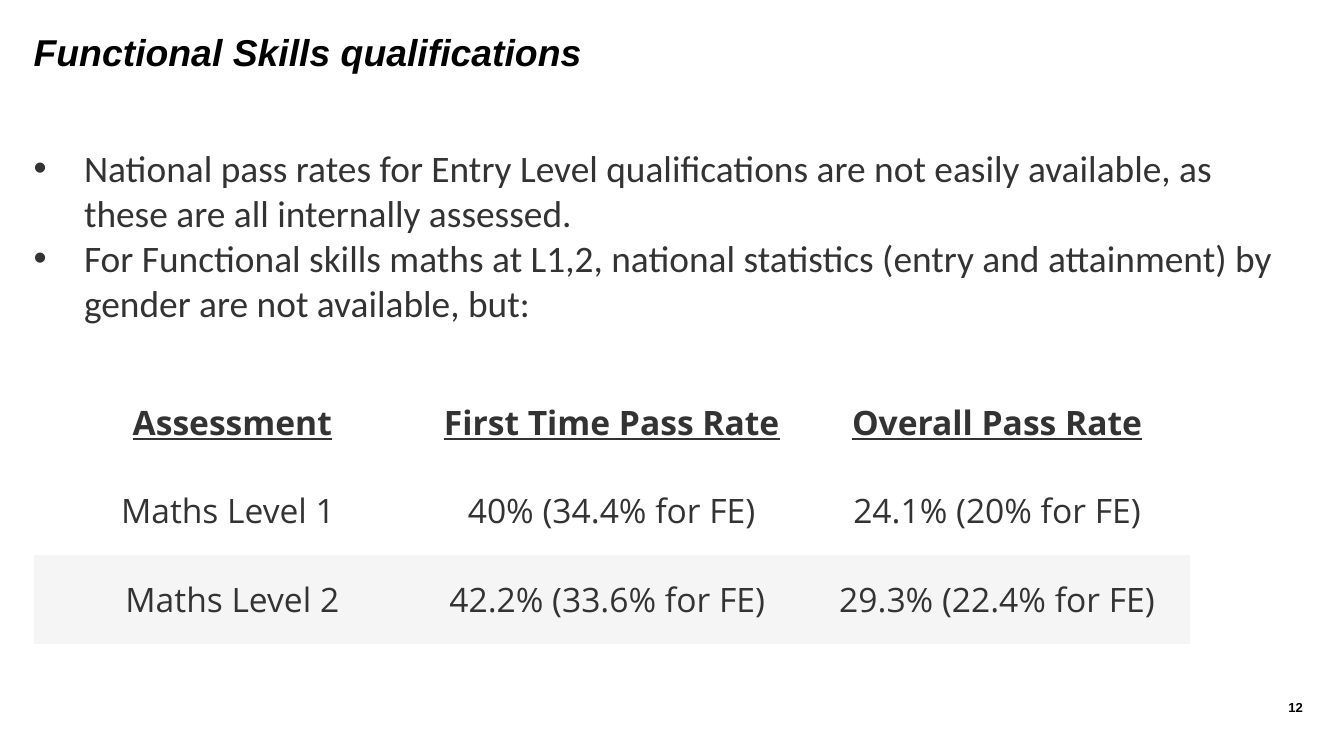
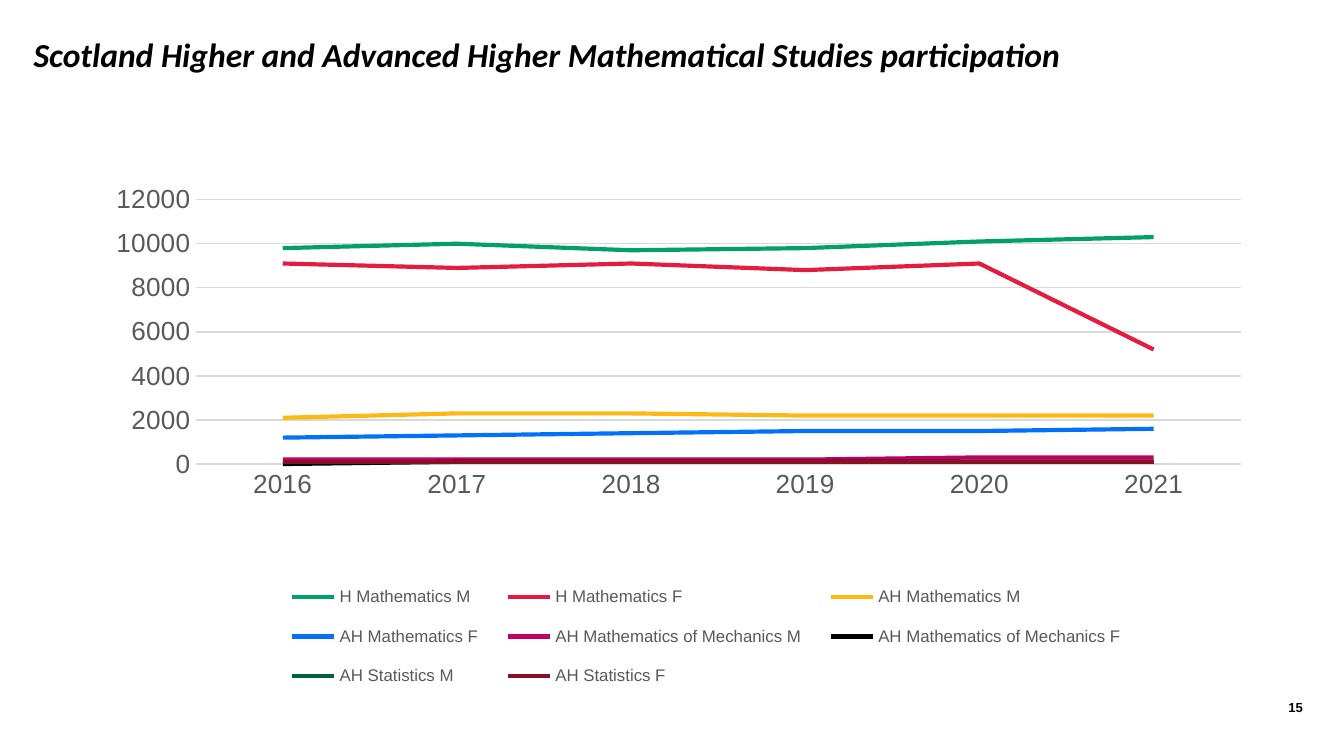
from lxml import etree
from pptx import Presentation
from pptx.chart.data import CategoryChartData
from pptx.dml.color import RGBColor
from pptx.enum.chart import XL_CHART_TYPE, XL_LEGEND_POSITION, XL_TICK_MARK
from pptx.enum.text import MSO_ANCHOR, MSO_AUTO_SIZE, PP_ALIGN
from pptx.oxml.ns import qn
from pptx.util import Pt

LINE_CHART = XL_CHART_TYPE.LINE
LEGEND_BOTTOM = XL_LEGEND_POSITION.BOTTOM
NO_TICK = XL_TICK_MARK.NONE
TOP, MIDDLE = MSO_ANCHOR.TOP, MSO_ANCHOR.MIDDLE
CENTER, RIGHT = PP_ALIGN.CENTER, PP_ALIGN.RIGHT
NO_AUTOFIT = MSO_AUTO_SIZE.NONE
BULLET_LAYOUT, TITLE_LAYOUT = 1, 5
PLAIN_TABLE_STYLE = "{2D5ABB26-0587-4C30-8999-92F81FD0307C}"

BLACK, WHITE, TEXT, PALE = "000000", "FFFFFF", "333333", "F5F5F5"
AXIS_TEXT, GRID = "595959", "D9D9D9"
LEFT = 18

POINTS = [
    "National pass rates for Entry Level qualifications are not easily available, "
    "as these are all internally assessed.",
    "For Functional skills maths at L1,2, national statistics (entry and attainment) "
    "by gender are not available, but:",
]
PASS_RATES = [
    ("Assessment", "First Time Pass Rate", "Overall Pass Rate"),
    ("Maths Level 1 ", "40% (34.4% for FE)", "24.1% (20% for FE)"),
    ("Maths Level 2", "42.2% (33.6% for FE) ", "29.3% (22.4% for FE)"),
]
YEARS = ["2016", "2017", "2018", "2019", "2020", "2021"]
PARTICIPATION = [
    ("H Mathematics M", "00A068", (9800, 10000, 9700, 9800, 10100, 10300)),
    ("H Mathematics F", "E51C41", (9100, 8900, 9100, 8800, 9100, 5200)),
    ("AH Mathematics M", "FDB913", (2100, 2300, 2300, 2200, 2200, 2200)),
    ("AH Mathematics F", "0071F8", (1200, 1300, 1400, 1500, 1500, 1600)),
    ("AH Mathematics of Mechanics M", "BE0064", (200, 200, 200, 200, 300, 300)),
    ("AH Mathematics of Mechanics F", BLACK, (0, 100, 100, 100, 100, 100)),
    ("AH Statistics M", "00603E", (100,) * 6),
    ("AH Statistics F", "8A1026", (100,) * 6),
]


def rgb(value):
    return RGBColor.from_string(value)


def set_font(font, size, color, name="Arial", bold=False, italic=False, underline=False):
    font.size, font.name = Pt(size), name
    font.bold, font.italic, font.underline = bold, italic, underline
    font.color.rgb = rgb(color)


def set_layout(parent, position, bounds, inner=False):
    for old in parent.findall(qn("c:layout")):
        parent.remove(old)
    layout = etree.Element(qn("c:layout"))
    parent.insert(position, layout)
    manual = etree.SubElement(layout, qn("c:manualLayout"))
    settings = [("layoutTarget", "inner")] if inner else []
    settings += [("xMode", "edge"), ("yMode", "edge"), *zip("xywh", bounds)]
    for tag, value in settings:
        etree.SubElement(manual, qn(f"c:{tag}")).set("val", str(value))


class SlideBuilder:
    def __init__(self):
        self.deck = Presentation()
        self.deck.slide_width, self.deck.slide_height = Pt(720), Pt(405)
        self.page = None

    def add_page(self, layout, title, number, size, font):
        self.page = self.deck.slides.add_slide(self.deck.slide_layouts[layout])
        para = self.fill_text(self.page.shapes.title, (LEFT, 19.5, 664.5, 54.5), [title])[0]
        para.alignment = None
        para.line_spacing = Pt(20)
        set_font(para.font, size, BLACK, font, bold=True, italic=True)
        self.page.shapes.title.text_frame.paragraphs[0].alignment = PP_ALIGN.LEFT
        box = self.page.shapes.add_textbox(0, 0, 0, 0)
        para = self.fill_text(box, (626.5, 375, 71.5, 21.5), [str(number)])[0]
        para.alignment = RIGHT
        set_font(para.font, 7, BLACK, bold=True)

    def fill_text(self, box, bounds, lines):
        box.left, box.top, box.width, box.height = map(Pt, bounds)
        frame = box.text_frame
        frame.text = "\n".join(lines)
        frame.word_wrap, frame.auto_size = True, NO_AUTOFIT
        frame.vertical_anchor = TOP
        frame.margin_left = frame.margin_right = 0
        frame.margin_top = frame.margin_bottom = 0
        return frame.paragraphs

    def add_bullets(self, bounds, lines):
        for para in self.fill_text(self.page.placeholders[1], bounds, lines):
            para.space_before = Pt(0)
            set_font(para.font, 20, TEXT, "Calibri")
            properties = para._p.get_or_add_pPr()
            properties.set("marL", str(Pt(27)))
            properties.set("indent", str(Pt(-27)))

    def add_table(self, bounds, rows):
        frame = self.page.shapes.add_table(len(rows), len(rows[0]), *map(Pt, bounds))
        table = frame.table
        table.first_row = table.horz_banding = False
        table._tbl.tblPr.find(qn("a:tableStyleId")).text = PLAIN_TABLE_STYLE
        for r, row in enumerate(rows):
            for c, text in enumerate(row):
                cell = table.cell(r, c)
                cell.text = text
                cell.vertical_anchor = MIDDLE
                cell.margin_left = Pt(12 if c else 18.5)
                cell.margin_right = Pt(12)
                cell.margin_top = cell.margin_bottom = Pt(11.5)
                cell.fill.solid()
                cell.fill.fore_color.rgb = rgb(PALE if r == 2 else WHITE)
                para = cell.text_frame.paragraphs[0]
                para.alignment = CENTER
                set_font(para.font, 18, TEXT, "Open Sans", bold=r == 0, underline=r == 0)
            table.rows[r].height = Pt(31)
        for column in table.columns:
            column.width = Pt(bounds[2] / len(rows[0]))

    def add_line_chart(self, bounds, categories, lines):
        data = CategoryChartData()
        data.categories = categories
        for name, _, values in lines:
            data.add_series(name, values)
        chart = self.page.shapes.add_chart(LINE_CHART, *map(Pt, bounds), data).chart
        set_font(chart.font, 10, BLACK)
        chart.has_title = False
        chart.plots[0].vary_by_categories = False
        for series, (_, color, _) in zip(chart.plots[0].series, lines):
            series.smooth = False
            series.format.line.width = Pt(2.25)
            series.format.line.color.rgb = rgb(color)
        for axis in (chart.category_axis, chart.value_axis):
            axis.major_tick_mark = axis.minor_tick_mark = NO_TICK
            set_font(axis.tick_labels.font, 14, AXIS_TEXT)
        value_axis = chart.value_axis
        value_axis.minimum_scale, value_axis.maximum_scale = 0, 12000
        value_axis.major_unit = 2000
        value_axis.format.line.fill.background()
        for line in (chart.category_axis.format.line, value_axis.major_gridlines.format.line):
            line.width = Pt(0.75)
            line.color.rgb = rgb(GRID)
        chart.has_legend = True
        chart.legend.position = LEGEND_BOTTOM
        chart.legend.include_in_layout = False
        set_font(chart.legend.font, 9, AXIS_TEXT)
        plot_area = chart._chartSpace.chart.plotArea
        set_layout(plot_area, 0, (0.1, 0.06, 0.87, 0.46), inner=True)
        set_layout(chart.legend._element, 1, (0.16, 0.7, 0.73, 0.24))


def main():
    builder = SlideBuilder()
    builder.add_page(BULLET_LAYOUT, "Functional Skills qualifications", 12, 20, "Arial")
    builder.add_bullets((LEFT, 78, 664.5, 283.5), POINTS)
    builder.add_table((LEFT, 202.5, 619.5, 93), PASS_RATES)

    title = "Scotland Higher and Advanced Higher Mathematical Studies participation"
    builder.add_page(TITLE_LAYOUT, title, 15, 18, "Calibri")
    builder.add_line_chart((40.5, 88.5, 643.5, 308), YEARS, PARTICIPATION)
    builder.deck.save("out.pptx")


if __name__ == "__main__":
    main()
